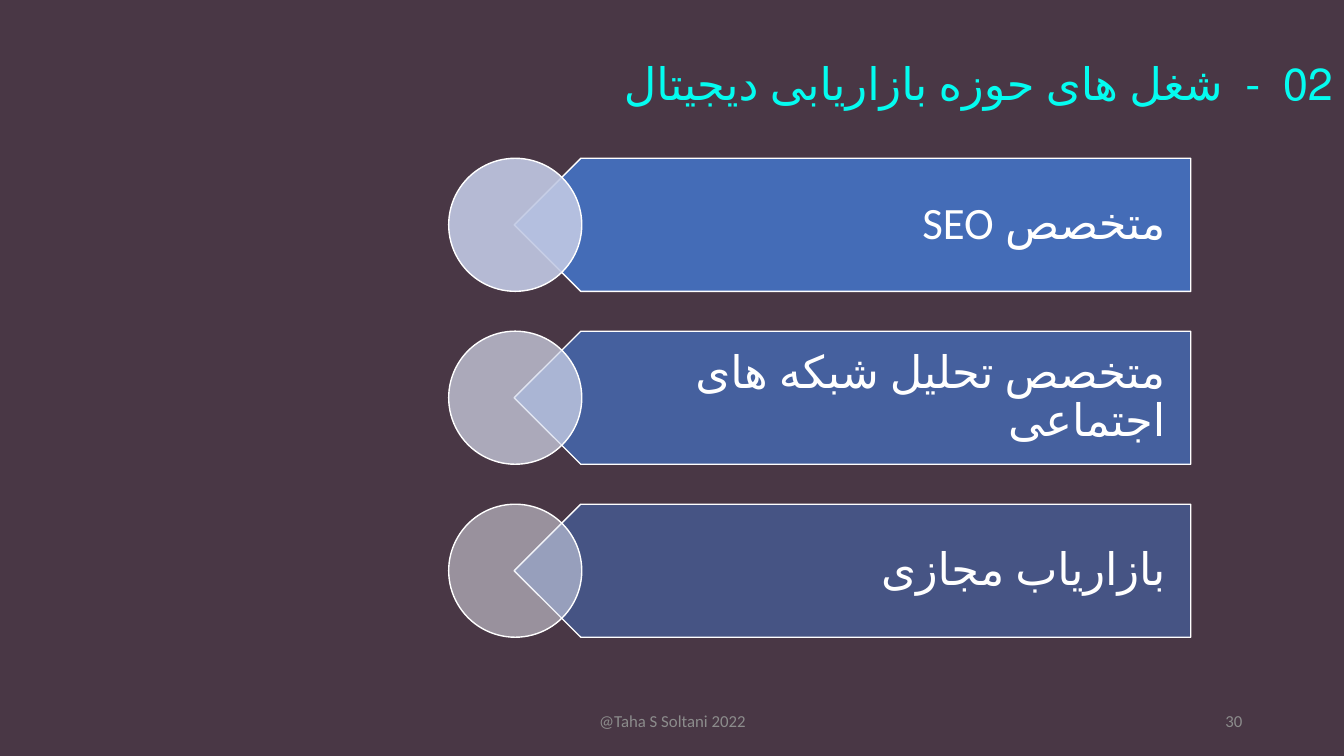
from dataclasses import dataclass

from lxml import etree
from pptx import Presentation
from pptx.dml.color import RGBColor
from pptx.enum.lang import MSO_LANGUAGE_ID
from pptx.enum.shapes import MSO_SHAPE
from pptx.enum.text import MSO_ANCHOR, MSO_AUTO_SIZE, PP_ALIGN
from pptx.oxml.ns import qn
from pptx.util import Inches, Pt

PENTAGON, OVAL = MSO_SHAPE.PENTAGON, MSO_SHAPE.OVAL
TOP, MIDDLE = MSO_ANCHOR.TOP, MSO_ANCHOR.MIDDLE
CENTER, RIGHT = PP_ALIGN.CENTER, PP_ALIGN.RIGHT
NO_AUTOFIT = MSO_AUTO_SIZE.NONE
PERSIAN = MSO_LANGUAGE_ID.FARSI


@dataclass(frozen=True)
class Theme:
    background: str = "493745"
    title: str = "04FCF0"
    banner: str = "4472C4"
    light: str = "FFFFFF"
    muted: str = "8C8C8C"
    font: str = "Calibri"
    large: int = 32
    small: int = 12


theme = Theme()


def write_text(shape, text, size, color, alignment, anchor=MIDDLE, right_to_left=False):
    frame = shape.text_frame
    frame.text = text
    frame.word_wrap = True
    frame.auto_size = NO_AUTOFIT
    frame.vertical_anchor = anchor
    paragraph = frame.paragraphs[0]
    paragraph.alignment = alignment
    if right_to_left:
        paragraph.line_spacing = 0.9
        paragraph._p.get_or_add_pPr().set("rtl", "1")
    for run in paragraph.runs:
        run.font.name = theme.font
        run.font.size = Pt(size)
        run.font.color.rgb = RGBColor.from_string(color)
        if right_to_left:
            run.font.language_id = PERSIAN


def paint(shape, color, opacity):
    shape.shadow.inherit = False
    shape.fill.solid()
    shape.fill.fore_color.rgb = RGBColor.from_string(color)
    color_element = shape._element.spPr.find(qn("a:solidFill"))[0]
    etree.SubElement(color_element, qn("a:alpha")).set("val", str(opacity * 1000))
    shape.line.color.rgb = RGBColor.from_string(theme.light)
    shape.line.width = Pt(1)


presentation = Presentation()
presentation.slide_width = Inches(13.33)
presentation.slide_height = Inches(7.5)
slide = presentation.slides.add_slide(presentation.slide_layouts[5])
slide.background.fill.solid()
slide.background.fill.fore_color.rgb = RGBColor.from_string(theme.background)

title = slide.shapes.title
title.left, title.top = Inches(4.42), Inches(0.56)
title.width, title.height = Inches(8.9), Inches(1.4)
write_text(title, "02  -  شغل های حوزه بازاریابی دیجیتال", theme.large, theme.title, RIGHT, TOP, True)

footers = [
    ("@Taha S Soltani 2022", 4.42, 4.5, CENTER),
    ("30", 9.42, 3, RIGHT),
]
for text, left, width, alignment in footers:
    footer = slide.shapes.add_textbox(Inches(left), Inches(6.95), Inches(width), Inches(0.4))
    write_text(footer, text, theme.small, theme.muted, alignment)

jobs = [
    ("متخصص SEO", "C1C9E4", 90),
    ("متخصص تحلیل شبکه های اجتماعی", "D5DAEC", 70),
    ("بازاریاب مجازی", "E9EBF5", 50),
]
diameter = Inches(1.32)
first_top = Inches(1.57)
row_pitch = int(diameter * 1.3)
circle_left = Inches(4.45)
banner_left = Inches(5.1)
banner_width = Inches(6.71)
label_left = Inches(5.43)
label_width = banner_left + banner_width - label_left

job_list = slide.shapes.add_group_shape()
for row, (job, circle_color, opacity) in enumerate(jobs):
    top = first_top + row * row_pitch

    banner = job_list.shapes.add_shape(PENTAGON, banner_left, top, banner_width, diameter)
    banner.rotation = 180
    paint(banner, theme.banner, opacity)

    label = job_list.shapes.add_textbox(label_left, top, label_width, diameter)
    write_text(label, job, theme.large, theme.light, RIGHT, MIDDLE, True)
    label.text_frame.margin_left = Inches(0.58)
    label.text_frame.margin_right = Inches(0.25)
    label.text_frame.margin_top = label.text_frame.margin_bottom = Inches(0.13)

    circle = job_list.shapes.add_shape(OVAL, circle_left, top, diameter, diameter)
    paint(circle, circle_color, opacity)

presentation.save("out.pptx")
